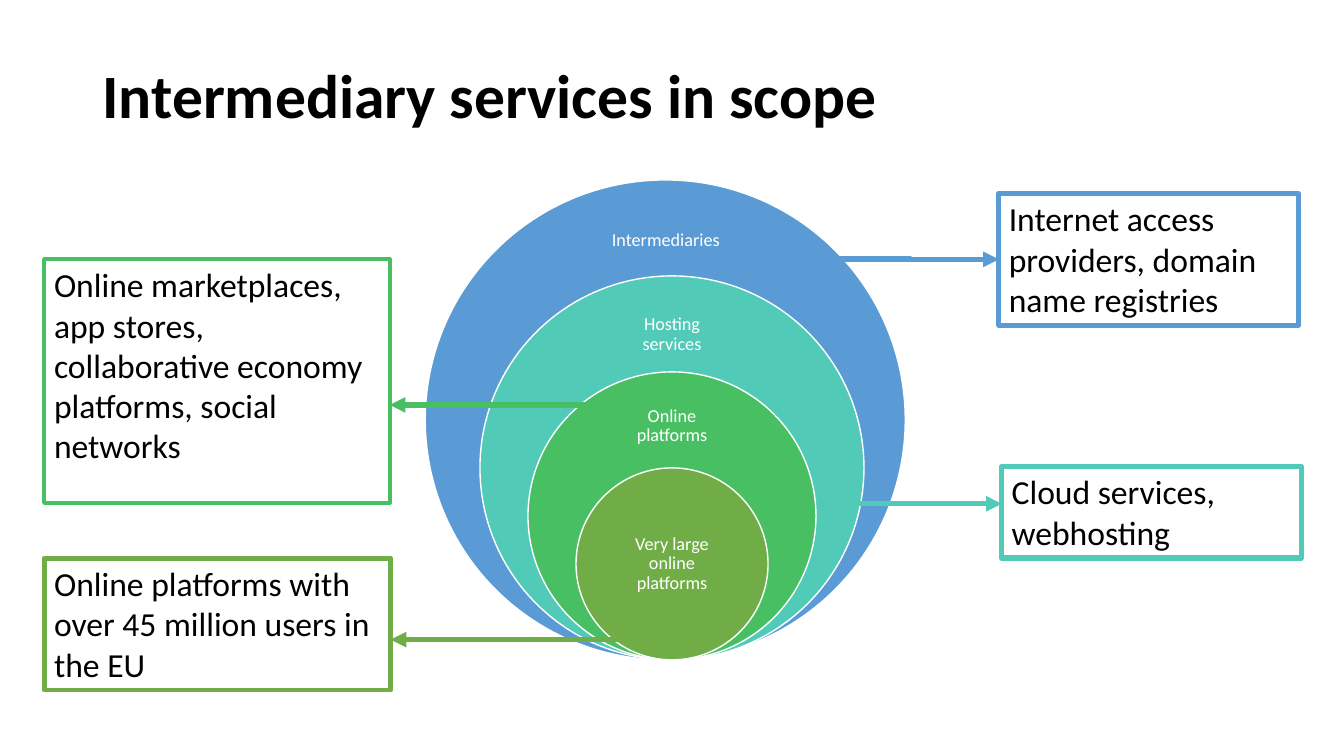
from pptx import Presentation
from pptx.dml.color import RGBColor
from pptx.enum.shapes import MSO_CONNECTOR, MSO_SHAPE
from pptx.enum.text import MSO_ANCHOR, PP_ALIGN
from pptx.oxml.ns import qn
from pptx.util import Inches, Pt
from lxml.etree import SubElement

WIDE, HIGH = Inches(13.33), Inches(7.5)
CELL = WIDE / 28
BASE = 13.75

BLACK = RGBColor(0x00, 0x00, 0x00)
WHITE = RGBColor(0xFF, 0xFF, 0xFF)
BLUE = RGBColor(0x5B, 0x9B, 0xD5)
TEAL = RGBColor(0x52, 0xCA, 0xB8)
GREEN = RGBColor(0x49, 0xBF, 0x64)
OLIVE = RGBColor(0x70, 0xAD, 0x47)

HEAD = {"size": Pt(44), "bold": True}
NOTE = {"size": Pt(24)}
LABEL = {"size": Pt(13)}

RINGS = [
    (13.86, 10, BLUE, "Intermediaries", (12.47, 4.26, 2.8, 1.49)),
    (14, 8, TEAL, "Hosting services", (12.6, 6.24, 2.8, 1.45)),
    (14, 6, GREEN, "Online platforms", (12.6, 8.21, 2.8, 1.34)),
    (14, 4, OLIVE, "Very large online platforms", (12.58, 10.75, 2.84, 2)),
]

NOTES = [
    ((20.81, 4.03, 6.24, 2.75), BLUE, 3.5, (17.12, 5.4),
     "Internet access providers, domain name registries"),
    ((20.87, 9.72, 6.24, 1.91), TEAL, 3.75, (17.51, 10.5),
     "Cloud services, webhosting"),
    ((0.92, 5.4, 7.2, 5.08), GREEN, 3, (13.04, 8.44),
     "Online marketplaces, app stores, collaborative economy platforms, "
     "social networks"),
    ((0.92, 11.63, 7.22, 2.75), OLIVE, 3.5, (12.89, 13.33),
     "Online platforms with over 45 million users in the EU"),
]


def grid(*cells):
    """Turn counts of grid cells into slide lengths."""
    return [round(cell * CELL) for cell in cells]


def apply(item, style):
    """Set each value of a style on an item."""
    for name, value in style.items():
        setattr(item, name, value)


def write(shape, text, font, color, frame, para):
    """Write one styled paragraph in a shape."""
    apply(shape.text_frame, {"word_wrap": True, **frame})
    line = shape.text_frame.paragraphs[0]
    line.text = text
    apply(line, para)
    apply(line.font, {"name": "Calibri", **font})
    line.font.color.rgb = color


def add_text(slide, area, text, font, color, frame, para):
    """Add a text box centred on its middle line."""
    box = slide.shapes.add_textbox(*grid(*area))
    write(box, text, font, color,
          {"vertical_anchor": MSO_ANCHOR.MIDDLE, **frame},
          {"line_spacing": 0.9, **para})


def add_ring(slide, mid, span, color, text, area):
    """Add a circle that rests on the base row, with its label."""
    ring = slide.shapes.add_shape(
        MSO_SHAPE.OVAL, *grid(mid - span / 2, BASE - span, span, span))
    ring.shadow.inherit = False
    ring.fill.solid()
    ring.fill.fore_color.rgb = color
    ring.line.color.rgb = WHITE
    ring.line.width = Pt(1)
    sides = ("left", "right", "top", "bottom")
    pad = {f"margin_{side}": Inches(0.1) for side in sides}
    add_text(slide, area, text, LABEL, WHITE, pad,
             {"alignment": PP_ALIGN.CENTER})


def add_note(slide, area, color, width, text):
    """Add an outlined box of text."""
    box = slide.shapes.add_shape(MSO_SHAPE.RECTANGLE, *grid(*area))
    box.shadow.inherit = False
    box.fill.background()
    box.line.color.rgb = color
    box.line.width = Pt(width)
    write(box, text, NOTE, BLACK, {"vertical_anchor": MSO_ANCHOR.TOP},
          {"alignment": PP_ALIGN.LEFT})
    return box


def add_arrow(slide, box, start, area, color):
    """Lead an arrow from a ring to the near side of a box."""
    left, top, width, height = area
    col, row = start
    edge = left if left > col else left + width
    arrow = slide.shapes.add_connector(
        MSO_CONNECTOR.ELBOW, *grid(col, row, edge, row))
    if abs(top + height / 2 - row) < 0.05:
        arrow.end_connect(box, 1 if left > col else 3)
    arrow.line.color.rgb = color
    arrow.line.width = Pt(3.75)
    SubElement(arrow.line._get_or_add_ln(), qn("a:tailEnd"), type="triangle")
    SubElement(arrow._element.spPr, qn("a:effectLst"))


def main():
    """Build the slide and save it."""
    deck = Presentation()
    apply(deck, {"slide_width": WIDE, "slide_height": HIGH})
    slide = deck.slides.add_slide(deck.slide_layouts[6])
    add_text(slide, (1.93, 0.84, 24.15, 2.44),
             "Intermediary services in scope", HEAD, BLACK, {}, {})
    for ring in RINGS:
        add_ring(slide, *ring)
    for area, color, width, start, text in NOTES:
        box = add_note(slide, area, color, width, text)
        add_arrow(slide, box, start, area, color)
    deck.save("out.pptx")


if __name__ == "__main__":
    main()
